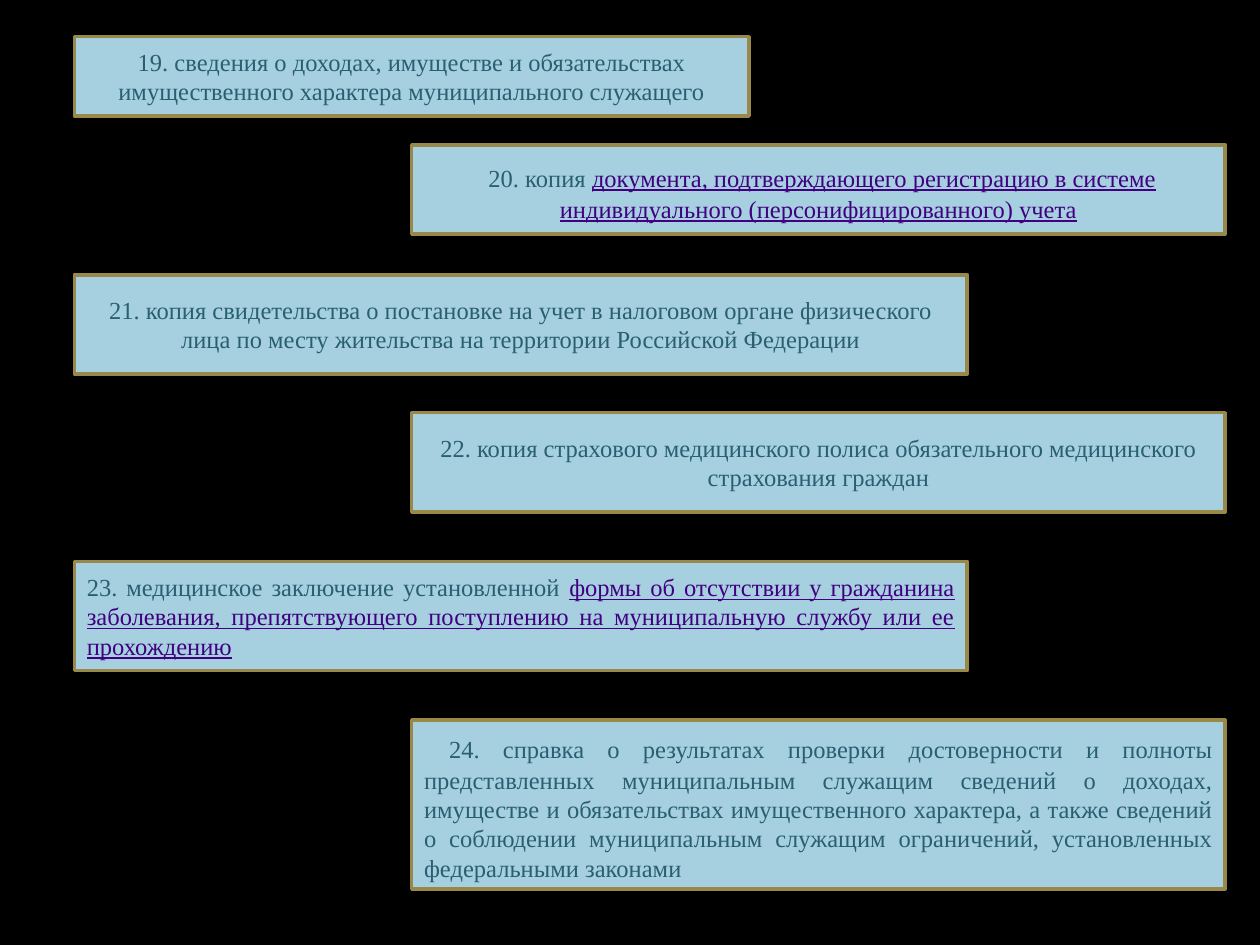
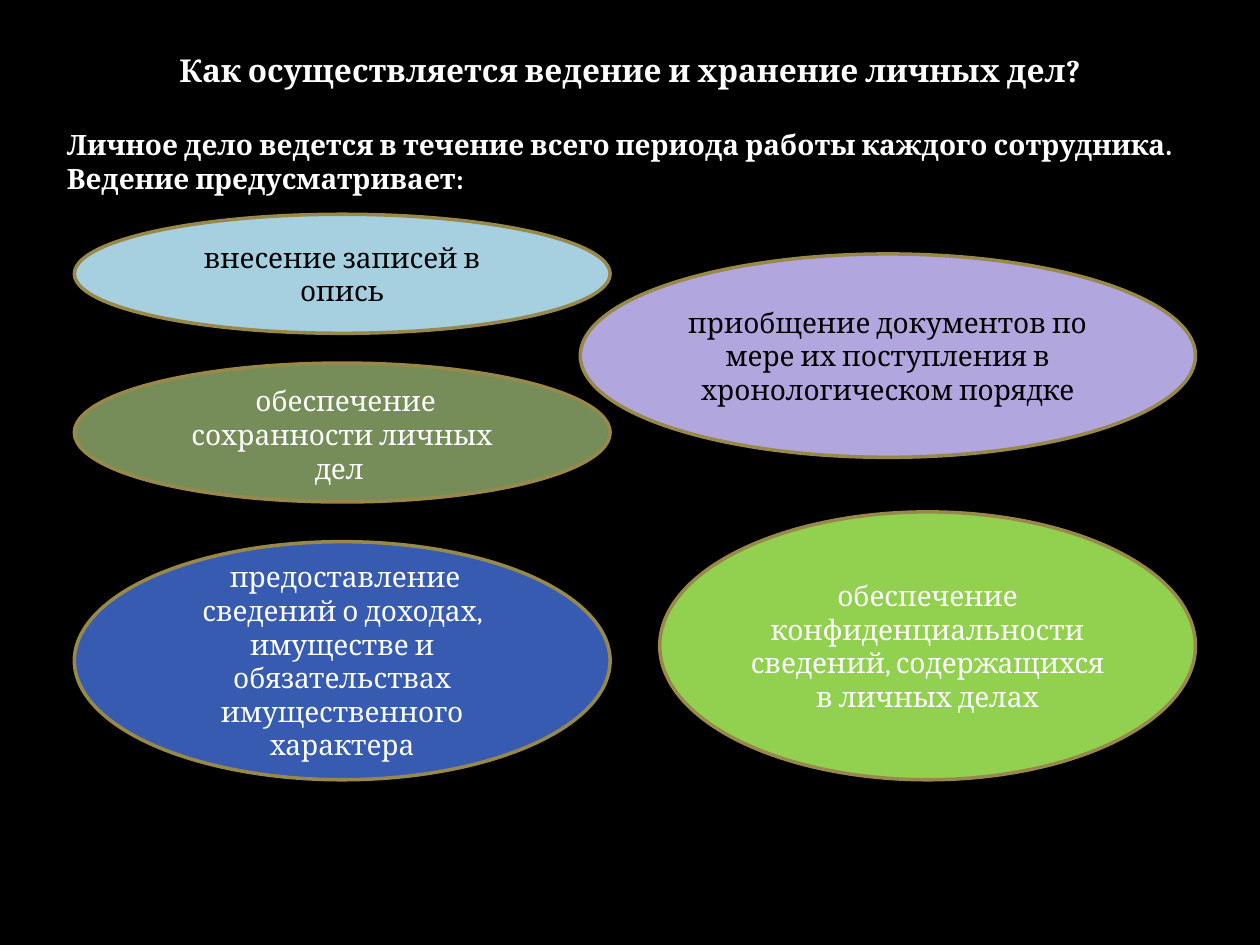
from pptx import Presentation
from pptx.dml.color import RGBColor
from pptx.enum.shapes import MSO_SHAPE
from pptx.enum.text import MSO_ANCHOR, PP_ALIGN
from pptx.util import Cm, Pt

COLOURS = {
    "page": "000000",
    "outline": "98894B",
    "sky": "A6D0DF",
    "lilac": "B2A6DF",
    "olive": "768D5A",
    "lime": "92D050",
    "blue": "375BB0",
    "teal": "295F71",
    "reference": "410082",
    "black": "000000",
    "white": "FFFFFF",
}
CENTRE, JUSTIFY, LEFT = PP_ALIGN.CENTER, PP_ALIGN.JUSTIFY, PP_ALIGN.LEFT
SERIF, HEADING = "Times New Roman", "Cambria"

# Documents: top, width, height (cm), alignment, lead space, text, underlined text
DOCUMENTS = [
    (0, 13.6, 1.6, CENTRE, False,
     "19. сведения о доходах, имуществе и обязательствах имущественного "
     "характера муниципального служащего", ""),
    (2.18, 16.4, 1.8, CENTRE, True, "20. копия ",
     "документа, подтверждающего регистрацию в системе индивидуального "
     "(персонифицированного) учета"),
    (4.8, 18, 2, CENTRE, False,
     "21. копия свидетельства о постановке на учет в налоговом органе "
     "физического лица по месту жительства на территории Российской Федерации", ""),
    (7.58, 16.4, 2, CENTRE, False,
     "22. копия страхового медицинского полиса обязательного медицинского "
     "страхования граждан", ""),
    (10.58, 18, 2.2, JUSTIFY, False, "23. медицинское заключение установленной ",
     "формы об отсутствии у гражданина заболевания, препятствующего "
     "поступлению на муниципальную службу или ее прохождению"),
    (13.78, 16.4, 3.4, JUSTIFY, True,
     "24. справка о результатах проверки достоверности и полноты представленных "
     "муниципальным служащим сведений о доходах, имуществе и обязательствах "
     "имущественного характера, а также сведений о соблюдении муниципальным "
     "служащим ограничений, установленных федеральными законами", ""),
]

# Duties: side, top, width, height (cm), fill, text colour, lead space, text
DUTIES = [
    ("left", 0, 10.8, 2.4, "sky", "black", False, "внесение записей в опись"),
    ("right", 0.8, 12.4, 4.1, "lilac", "black", False,
     "приобщение документов по мере их поступления в хронологическом порядке"),
    ("left", 3, 10.8, 2.8, "olive", "white", True,
     "обеспечение сохранности личных дел "),
    ("right", 6, 10.8, 5.4, "lime", "white", False,
     "обеспечение конфиденциальности сведений, содержащихся в личных делах"),
    ("left", 6.6, 10.8, 4.8, "blue", "white", False,
     " предоставление сведений о доходах, имуществе и обязательствах "
     "имущественного характера"),
]


def colour(name):
    return RGBColor.from_string(COLOURS[name])


def add_span(para, text, font, size, ink, bold=False, underline=False):
    span = para.add_run()
    span.text = text
    span.font.name = font
    span.font.size = Pt(size)
    span.font.color.rgb = colour(ink)
    span.font.bold = bold
    span.font.underline = underline


def add_panel(page, kind, box, fill, align):
    """Draw an outlined shape and return its empty paragraph."""
    panel = page.shapes.add_shape(kind, *map(Cm, box))
    panel.shadow.inherit = False
    panel.fill.solid()
    panel.fill.fore_color.rgb = colour(fill)
    panel.line.color.rgb = colour("outline")
    panel.line.width = Pt(2)
    frame = panel.text_frame
    frame.word_wrap = True
    frame.vertical_anchor = MSO_ANCHOR.MIDDLE
    para = frame.paragraphs[0]
    para.alignment = align
    return para


def add_page(deck):
    page = deck.slides.add_slide(deck.slide_layouts[6])
    page.background.fill.solid()
    page.background.fill.fore_color.rgb = colour("page")
    return page


def add_documents(page, box):
    """Stagger the documents between the left and right edges of the box."""
    left, top, width, _ = box
    for index, document in enumerate(DOCUMENTS):
        offset, wide, high, align, lead, text, reference = document
        start = left if index % 2 == 0 else left + width - wide
        para = add_panel(page, MSO_SHAPE.RECTANGLE,
                         (start, top + offset, wide, high), "sky", align)
        if lead:
            add_span(para, " ", SERIF, 18, "teal")
        add_span(para, text, SERIF, 14, "teal")
        if reference:
            add_span(para, reference, SERIF, 14, "reference", underline=True)


def add_heading(page, box):
    """Write the question and the lead-in below it."""
    frame = page.shapes.add_textbox(*map(Cm, box)).text_frame
    frame.word_wrap = True
    question = frame.paragraphs[0]
    question.alignment = CENTRE
    add_span(question, "Как осуществляется ведение и хранение личных дел?",
             HEADING, 18, "white", bold=True)
    intro = frame.add_paragraph()
    intro.alignment = LEFT
    intro.space_before = Pt(22)
    add_span(intro, "Личное дело ведется в течение всего периода работы каждого "
             "сотрудника. Ведение предусматривает:", HEADING, 16, "white", bold=True)


def add_duties(page, box):
    """Set the ellipses against the two sides of the box."""
    left, top, width, _ = box
    for side, offset, wide, high, fill, ink, lead, text in DUTIES:
        start = left if side == "left" else left + width - wide
        para = add_panel(page, MSO_SHAPE.OVAL,
                         (start, top + offset, wide, high), fill, CENTRE)
        if lead:
            add_span(para, " ", HEADING, 18, ink)
        add_span(para, text, HEADING, 16, ink)


def main():
    deck = Presentation()
    deck.slide_width, deck.slide_height = Cm(25.4), Cm(19.05)

    # Documents 19 to 24
    add_documents(add_page(deck), (1.5, 0.74, 23.2, 17.18))

    # Keeping personal files
    page = add_page(deck)
    add_heading(page, (1.1, 0.91, 23.2, 15.2))
    add_duties(page, (1.5, 4.32, 22.6, 11.4))

    deck.save("out.pptx")


if __name__ == "__main__":
    main()
